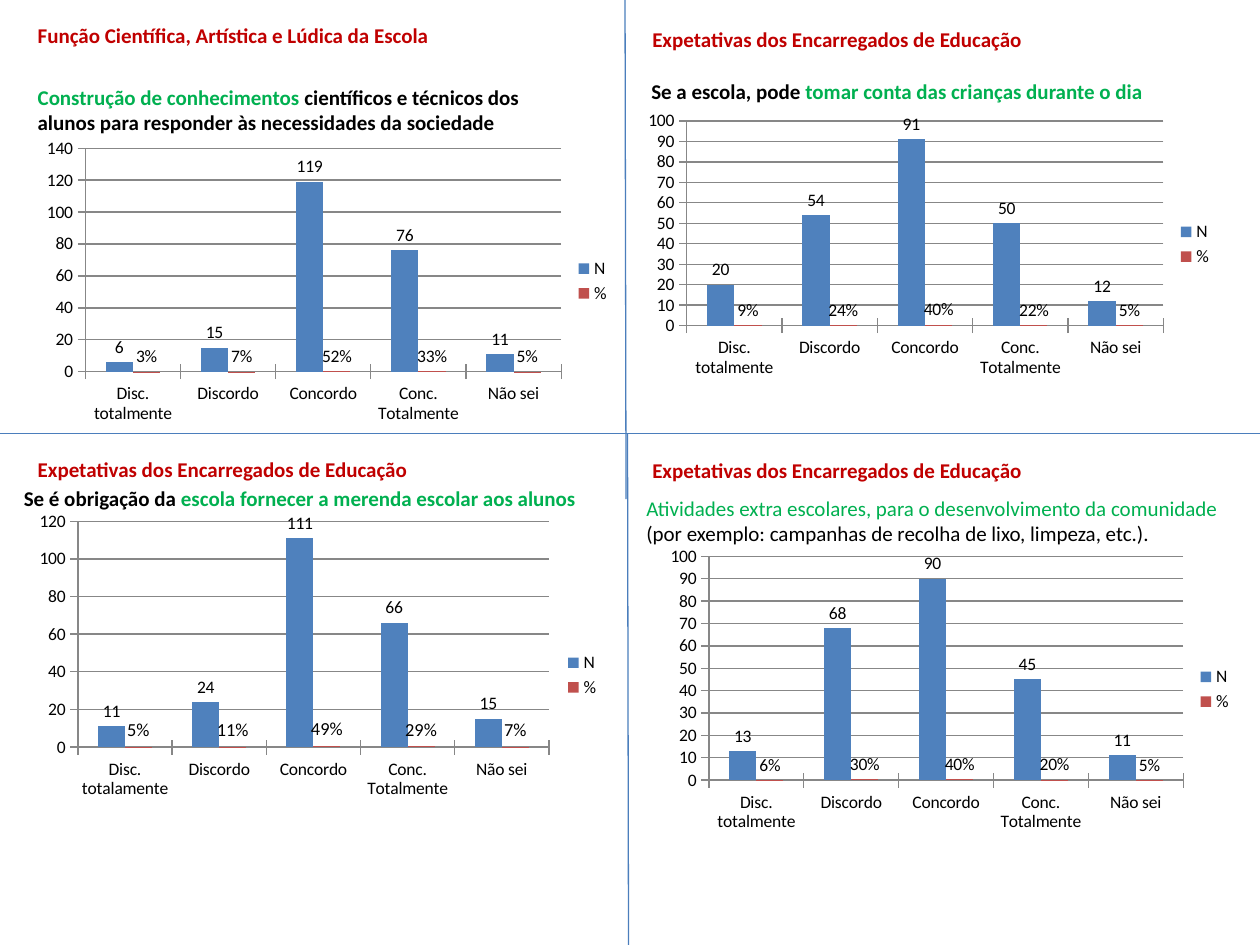
from lxml import etree
from pptx import Presentation
from pptx.chart.data import CategoryChartData
from pptx.dml.color import RGBColor
from pptx.enum.chart import XL_CHART_TYPE, XL_LABEL_POSITION, XL_LEGEND_POSITION, XL_TICK_MARK
from pptx.enum.shapes import MSO_CONNECTOR
from pptx.enum.text import MSO_ANCHOR, MSO_AUTO_SIZE, PP_ALIGN
from pptx.oxml import parse_xml
from pptx.oxml.ns import qn
from pptx.util import Cm, Pt

COLUMN = XL_CHART_TYPE.COLUMN_CLUSTERED
OUTSIDE = XL_LABEL_POSITION.OUTSIDE_END
RIGHT = XL_LEGEND_POSITION.RIGHT
CROSS = XL_TICK_MARK.CROSS
NONE = XL_TICK_MARK.NONE
STRAIGHT = MSO_CONNECTOR.STRAIGHT
TOP = MSO_ANCHOR.TOP
FIXED = MSO_AUTO_SIZE.NONE
LEFT = PP_ALIGN.LEFT

RED, GREEN, BLACK, GREY = "C00000", "00B050", "000000", "878787"
FRAME = {"word_wrap": True, "auto_size": FIXED, "vertical_anchor": TOP,
         "margin_left": Cm(0.25), "margin_right": Cm(0.25),
         "margin_top": Cm(0.13), "margin_bottom": Cm(0.13)}
HOPES = "Expetativas dos Encarregados de Educação"
MID = (12.7, 8.74)
PANELS = [
    {"box": (0, 0), "head": "Função Científica, Artística e Lúdica da Escola",
     "head_at": (0.51, 0.33, 8.51, 0.76), "note_at": (0.51, 1.57, 10.8, 1.27),
     "note": [("Construção de conhecimentos ", GREEN),
              ("científicos e técnicos dos alunos para responder às necessidades da sociedade", BLACK)],
     "chart_at": (0.71, 2.67, 11.84, 5.99),
     "count": (6, 15, 119, 76, 11), "share": (0.03, 0.07, 0.52, 0.33, 0.05)},
    {"box": (MID[0], 0), "head": HOPES,
     "head_at": (0.2, 0.41, 8.05, 0.76), "note_at": (0.18, 1.45, 12.7, 0.76),
     "note": [("Se a escola, pode ", BLACK), ("tomar conta das crianças durante o dia", GREEN)],
     "chart_at": (0.13, 2.13, 11.86, 5.59),
     "count": (20, 54, 91, 50, 12), "share": (0.09, 0.24, 0.4, 0.22, 0.05)},
    {"box": (0, MID[1]), "head": HOPES,
     "head_at": (0.51, 0.33, 8.05, 0.76), "note_at": (0.23, 0.91, 12.7, 0.76),
     "note": [("Se é obrigação da ", BLACK),
              ("escola fornecer a merenda escolar aos alunos", GREEN)],
     "chart_at": (0.76, 1.57, 11.58, 6.6), "first": "Disc. totalamente",
     "plot": {"x": 0.07, "y": 0.03, "w": 0.82, "h": 0.69}, "share_size": 10.5,
     "count": (11, 24, 111, 66, 15), "share": (0.05, 0.11, 0.49, 0.29, 0.07)},
    {"box": MID, "head": HOPES,
     "head_at": (0.2, 0.35, 8.05, 0.76), "note_at": (0.08, 1.12, 12.7, 1.27),
     "note": [("Atividades extra escolares, para o desenvolvimento da comunidade ", GREEN),
              ("(por exemplo: campanhas de recolha de lixo, limpeza, etc.).", BLACK)],
     "bold": False, "chart_at": (0.58, 2.16, 11.81, 5.99),
     "count": (13, 68, 90, 45, 11), "share": (0.06, 0.3, 0.4, 0.2, 0.05)},
]
RULES = [(12.65, MID[1], 12.67, 19.05), (0, MID[1], 25.4, MID[1]), (12.6, 0, 12.62, 10.06)]


def rgb(code):
    """Turn a hex string into a colour."""
    return RGBColor.from_string(code)


def put(target, values):
    """Set each named value on the target."""
    for name, value in values.items():
        setattr(target, name, value)


def style(font, size, color, bold=False):
    """Format a font."""
    put(font, {"name": "Calibri", "size": Pt(size), "bold": bold})
    font.color.rgb = rgb(color)


def place(box, at):
    """Give the lengths of a part set inside a box."""
    return Cm(box[0] + at[0]), Cm(box[1] + at[1]), Cm(at[2]), Cm(at[3])


def write(shape, area, parts, bold=True):
    """Move a text shape and fill it with coloured runs."""
    put(shape, dict(zip(("left", "top", "width", "height"), area)))
    put(shape.text_frame, FRAME)
    para = shape.text_frame.paragraphs[0]
    para.alignment = LEFT
    for text, color in parts:
        run = para.add_run()
        run.text = text
        style(run.font, 12, color, bold)


def set_plot(chart, sizes):
    """Fix the inner plot area as fractions of the chart."""
    area = chart._chartSpace.find(".//" + qn("c:plotArea"))
    for old in area.findall(qn("c:layout")):
        area.remove(old)
    ns = "http://schemas.openxmlformats.org/drawingml/2006/chart"
    layout = parse_xml(f'<c:layout xmlns:c="{ns}"><c:manualLayout/></c:layout>')
    modes = {"layoutTarget": "inner", "xMode": "edge", "yMode": "edge"}
    for tag, value in {**modes, **sizes}.items():
        etree.SubElement(layout[0], qn("c:" + tag)).set("val", str(value))
    area.insert(0, layout)


def add_bars(slide, area, panel):
    """Add the column chart of answers."""
    data = CategoryChartData()
    data.categories = [panel.get("first", "Disc. totalmente"), "Discordo", "Concordo",
                       "Conc. Totalmente", "Não sei"]
    data.add_series("N", panel["count"], "General")
    data.add_series("%", panel["share"], "0%")
    chart = slide.shapes.add_chart(COLUMN, *area, data).chart
    put(chart, {"has_title": False, "has_legend": True})
    style(chart.font, 10, BLACK)
    put(chart.legend, {"position": RIGHT, "include_in_layout": False})
    for axis in (chart.category_axis, chart.value_axis):
        put(axis, {"major_tick_mark": CROSS, "minor_tick_mark": NONE})
        axis.format.line.color.rgb = rgb(GREY)
    chart.value_axis.major_gridlines.format.line.color.rgb = rgb(GREY)
    plot = chart.plots[0]
    put(plot, {"gap_width": 150, "overlap": 0, "vary_by_categories": False})
    looks = (("4F81BD", "General", 10), ("C0504D", "0%", panel.get("share_size", 10)))
    for series, (color, code, size) in zip(plot.series, looks):
        series.format.fill.solid()
        series.format.fill.fore_color.rgb = rgb(color)
        series.invert_if_negative = False
        labels = series.data_labels
        put(labels, {"show_value": True, "position": OUTSIDE,
                     "number_format": code, "number_format_is_linked": False})
        style(labels.font, size, BLACK)
    if "plot" in panel:
        set_plot(chart, panel["plot"])


def add_panel(slide, panel, head):
    """Lay out one quarter: heading, question and chart."""
    box = panel["box"]
    add_bars(slide, place(box, panel["chart_at"]), panel)
    area = place(box, panel["note_at"])
    write(slide.shapes.add_textbox(*area), area, panel["note"], panel.get("bold", True))
    area = place(box, panel["head_at"])
    write(head or slide.shapes.add_textbox(*area), area, [(panel["head"], RED)])


def add_rule(slide, ends):
    """Draw one dividing line."""
    line = slide.shapes.add_connector(STRAIGHT, *map(Cm, ends))
    line.line.color.rgb = rgb("4B7EBC")
    line.line.width = Pt(0.75)
    etree.SubElement(line._element.spPr, qn("a:effectLst"))


def main():
    """Build and save the slide."""
    deck = Presentation()
    put(deck, {"slide_width": Cm(25.4), "slide_height": Cm(19.05)})
    slide = deck.slides.add_slide(deck.slide_layouts[5])
    for ends in RULES:
        add_rule(slide, ends)
    heads = [slide.shapes.title, None, None, None]
    for panel, head in zip(PANELS, heads):
        add_panel(slide, panel, head)
    deck.save("out.pptx")


if __name__ == "__main__":
    main()
